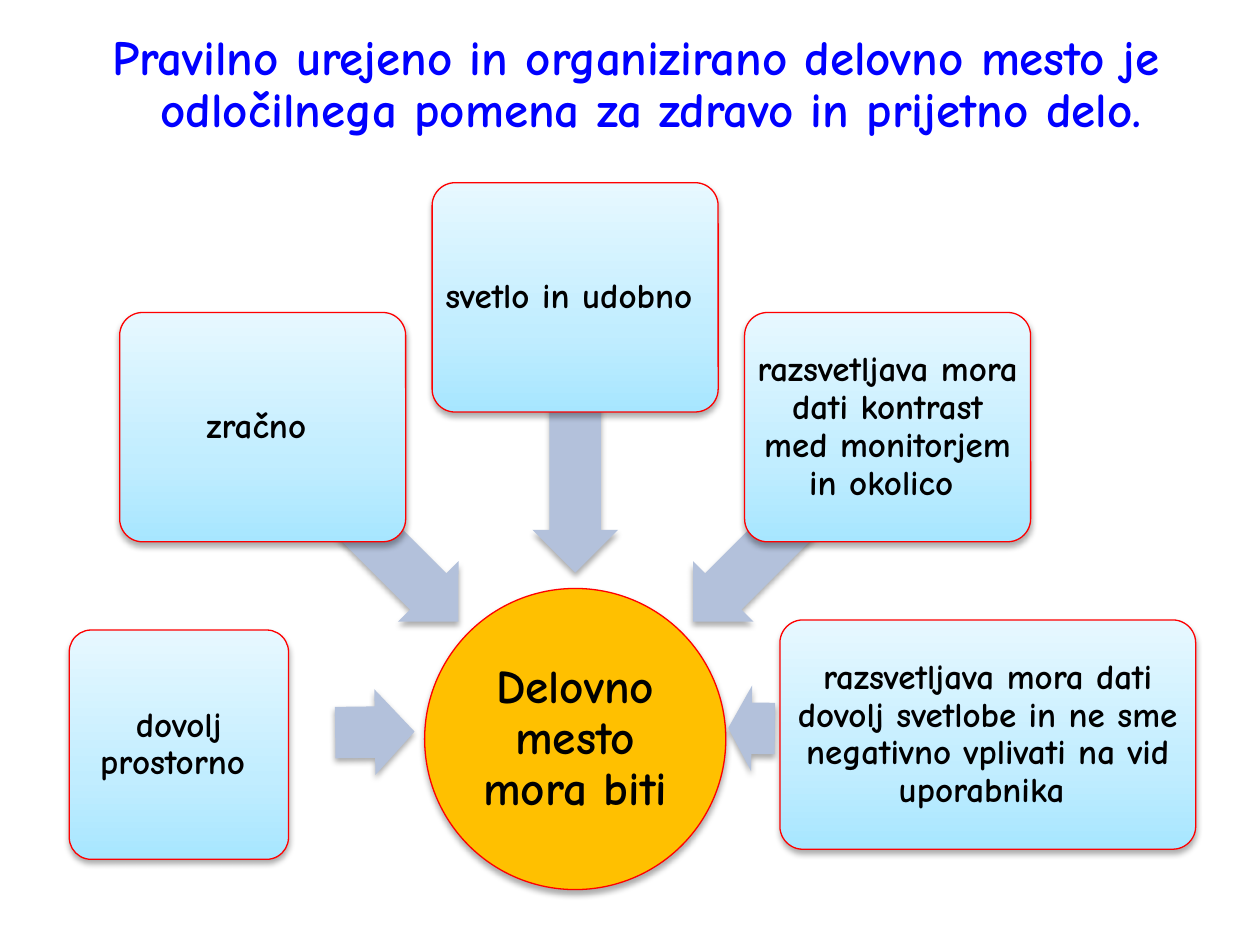
from copy import deepcopy

from lxml.etree import SubElement
from pptx import Presentation
from pptx.dml.color import RGBColor
from pptx.enum.shapes import MSO_SHAPE as Shape
from pptx.enum.text import MSO_ANCHOR as Anchor, PP_ALIGN as Align
from pptx.oxml.ns import qn
from pptx.util import Inches, Pt

FONT = "Comic Neue"
BLACK = RGBColor(0, 0, 0)
BLUE = RGBColor(0, 0, 255)
RED = RGBColor(255, 0, 0)
GOLD = RGBColor(0xFF, 0xC0, 0)
ARROW = RGBColor(0xB3, 0xC1, 0xDB)
SKY_STOPS = [
    (0, RGBColor(0xA7, 0xE6, 0xFF)),
    (0.35, RGBColor(0xC1, 0xED, 0xFF)),
    (1, RGBColor(0xE7, 0xF8, 0xFF)),
]

HUB = (3.37, 4.67, 2.39, 2.39)
SPOKES = [
    ("dovolj prostorno ", (0.55, 5, 1.74, 1.82), (2.66, 5.47, 0.63, 0.68), 179.3),
    ("zračno ", (0.95, 2.48, 2.27, 1.82), (1.77, 3.82, 2.19, 0.68), 225),
    ("svetlo in udobno ", (3.43, 1.45, 2.27, 1.82), (3.47, 3.11, 2.19, 0.68), 270),
    ("razsvetljava mora dati kontrast med monitorjem in okolico ",
     (5.91, 2.48, 2.27, 1.82), (5.18, 3.82, 2.19, 0.68), 315),
    ("razsvetljava mora dati dovolj svetlobe in ne sme negativno vplivati "
     "na vid uporabnika ",
     (6.19, 4.92, 3.3, 1.82), (5.78, 5.44, 0.37, 0.68), 0.7),
]


def write(shape, text, size, color, inset):
    frame = shape.text_frame
    frame.word_wrap = True
    frame.vertical_anchor = Anchor.MIDDLE
    frame.margin_left = frame.margin_right = Inches(inset)
    frame.margin_top = frame.margin_bottom = Inches(inset)
    para = frame.paragraphs[0]
    para.alignment = Align.CENTER
    para.line_spacing = 0.9
    span = para.add_run()
    span.text = text
    span.font.name = FONT
    span.font.size = Pt(size)
    span.font.bold = True
    span.font.color.rgb = color
    return para


def add_shadowed(page, kind, box):
    shape = page.shapes.add_shape(kind, *map(Inches, box))
    shape.shadow.inherit = False
    effects = shape._element.spPr.find(qn("a:effectLst"))
    shadow = SubElement(effects, qn("a:outerShdw"), blurRad=str(Pt(3.5)),
                        dist=str(Pt(2.2)), dir="5400000", rotWithShape="0")
    tone = SubElement(shadow, qn("a:srgbClr"), val=str(BLACK))
    SubElement(tone, qn("a:alpha"), val="32000")
    return shape


def outline(shape):
    shape.line.color.rgb = RED
    shape.line.width = Pt(0.75)


def fill_sky(shape):
    shape.fill.gradient()
    stop_list = shape._element.spPr.find(".//" + qn("a:gsLst"))
    stop_list.insert(1, deepcopy(stop_list[0]))
    for stop, (position, color) in zip(shape.fill.gradient_stops, SKY_STOPS):
        stop.position = position
        stop.color.rgb = color
    shape.fill.gradient_angle = 90


def add_title(page, box):
    title = page.shapes.add_textbox(*map(Inches, box))
    para = write(title, "Pravilno urejeno in organizirano delovno mesto je "
                 "odločilnega pomena za zdravo in prijetno delo. ", 28, BLUE, 0.1)
    title.text_frame.vertical_anchor = Anchor.TOP
    title.text_frame.margin_top = Inches(0.26)
    indents = para._p.get_or_add_pPr()
    indents.set("marL", str(Inches(0.38)))
    indents.set("indent", str(-Inches(0.38)))


def add_hub(page, box):
    hub = add_shadowed(page, Shape.OVAL, box)
    hub.fill.solid()
    hub.fill.fore_color.rgb = GOLD
    outline(hub)
    write(hub, "Delovno mesto mora biti", 27, BLACK, 0.02)


def add_arrow(page, box, angle):
    arrow = add_shadowed(page, Shape.LEFT_ARROW, box)
    arrow.adjustments[0] = 0.6
    arrow.adjustments[1] = 0.5
    arrow.rotation = angle
    arrow.fill.solid()
    arrow.fill.fore_color.rgb = ARROW
    arrow.line.fill.background()


def add_card(page, box, text):
    card = add_shadowed(page, Shape.ROUNDED_RECTANGLE, box)
    card.adjustments[0] = 0.1
    fill_sky(card)
    outline(card)
    write(card, text, 20, BLACK, 0.04)


def main():
    deck = Presentation()
    deck.slide_width = Inches(10)
    deck.slide_height = Inches(7.5)
    page = deck.slides.add_slide(deck.slide_layouts[6])
    add_title(page, (0.2, 0, 9.69, 1.3))
    add_hub(page, HUB)
    for text, card_box, arrow_box, angle in SPOKES:
        add_arrow(page, arrow_box, angle)
        add_card(page, card_box, text)
    deck.save("out.pptx")


if __name__ == "__main__":
    main()
